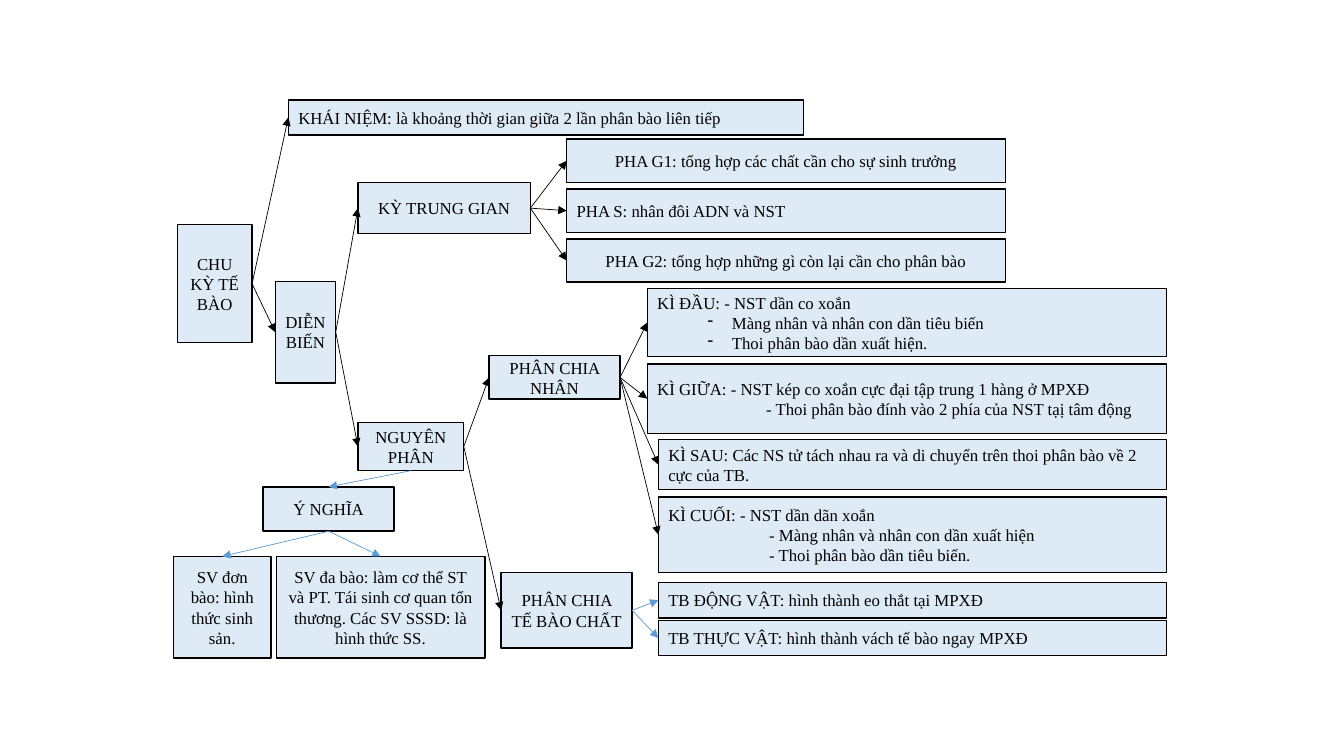
from lxml import etree
from pptx import Presentation
from pptx.dml.color import RGBColor
from pptx.enum.shapes import MSO_CONNECTOR, MSO_SHAPE
from pptx.enum.text import MSO_ANCHOR, PP_ALIGN
from pptx.oxml.ns import qn
from pptx.util import Inches, Pt

RECTANGLE = MSO_SHAPE.RECTANGLE
STRAIGHT = MSO_CONNECTOR.STRAIGHT
MIDDLE = MSO_ANCHOR.MIDDLE
CENTER, LEFT = PP_ALIGN.CENTER, PP_ALIGN.LEFT
TOP_SIDE, LEFT_SIDE, BOTTOM_SIDE, RIGHT_SIDE = range(4)
COLOURS = {"fill": "DEEBF7", "ink": "000000", "blue": "5B9BD5"}
FONT = "Times New Roman"
BULLET_INDENT, BULLET_HANGING = 0.74, 0.24


def colour(name):
    """Return the named colour of the palette."""
    return RGBColor.from_string(COLOURS[name])


def indent_paragraph(paragraph, indent, bullet):
    """Indent a paragraph, with a hanging dash if it is a bullet."""
    properties = paragraph._p.get_or_add_pPr()
    properties.set("marL", str(Inches(indent)))
    if bullet:
        properties.set("indent", str(-Inches(BULLET_HANGING)))
        etree.SubElement(properties, qn("a:buChar")).set("char", "-")


def add_node(slide, box, lines, align=CENTER, indent=0, bullet=False):
    """Add a framed box of text; lines after the first are indented."""
    shape = slide.shapes.add_shape(RECTANGLE, *[Inches(length) for length in box])
    shape.shadow.inherit = False
    shape.fill.solid()
    shape.fill.fore_color.rgb = colour("fill")
    shape.line.color.rgb = colour("ink")
    shape.line.width = Pt(1)
    frame = shape.text_frame
    frame.word_wrap = True
    frame.vertical_anchor = MIDDLE
    for index, line in enumerate(lines):
        paragraph = frame.add_paragraph() if index else frame.paragraphs[0]
        paragraph.alignment = align
        if index:
            indent_paragraph(paragraph, indent, bullet)
        run = paragraph.add_run()
        run.text = line
        run.font.name = FONT
        run.font.size = Pt(12)
        run.font.color.rgb = colour("ink")
    return shape


def add_arrows(slide, parent, children, ink="ink", start=RIGHT_SIDE, end=LEFT_SIDE):
    """Join a parent box to each of its children with an arrow."""
    for child in children:
        arrow = slide.shapes.add_connector(STRAIGHT, 0, 0, 0, 0)
        arrow.begin_connect(parent, start)
        arrow.end_connect(child, end)
        arrow.line.color.rgb = colour(ink)
        arrow.line.width = Pt(0.5)
        etree.SubElement(arrow.line._get_or_add_ln(), qn("a:tailEnd")).set("type", "triangle")
        etree.SubElement(arrow._element.spPr, qn("a:effectLst"))


def add_cycle(slide, left, top):
    """Add the root with its definition and return the course box."""
    root = add_node(slide, (left, top + 1.24, 0.74, 1.17), ["CHU KỲ TẾ BÀO"])
    concept = add_node(slide, (left + 1.1, top, 5.11, 0.35),
                       ["KHÁI NIỆM: là khoảng thời gian giữa 2 lần phân bào liên tiếp"], LEFT)
    course = add_node(slide, (left + 0.97, top + 1.8, 0.6, 1.01), ["DIỄN BIẾN"])
    add_arrows(slide, root, [concept, course])
    return course


def add_interphase(slide, left, top):
    """Add the interphase box with its three phases and return it."""
    interphase = add_node(slide, (left, top + 0.43, 1.71, 0.51), ["KỲ TRUNG GIAN"])
    texts = [
        ("PHA G1: tổng hợp các chất cần cho sự sinh trưởng", CENTER),
        ("PHA S: nhân đôi ADN và NST", LEFT),
        ("PHA G2: tổng hợp những gì còn lại cần cho phân bào", CENTER),
    ]
    phases = [add_node(slide, (left + 2.07, top + 0.495 * row, 4.35, 0.43), [text], align)
              for row, (text, align) in enumerate(texts)]
    add_arrows(slide, interphase, phases)
    return interphase


def add_nuclear_division(slide, left, top):
    """Add the nuclear division box with its four stages and return it."""
    nuclear = add_node(slide, (left, top + 0.67, 1.3, 0.43), ["PHÂN CHIA NHÂN"])
    right = left + 6.72
    stages = [
        (5.15, 0, 0.68, BULLET_INDENT, True,
         ["KÌ ĐẦU: - NST dần co xoắn",
          "Màng nhân và nhân con dần tiêu biến",
          "Thoi phân bào dần xuất hiện."]),
        (5.15, 0.75, 0.69, 1.08, False,
         ["KÌ GIỮA: - NST kép co xoắn cực đại tập trung 1 hàng ở MPXĐ",
          "- Thoi phân bào đính vào 2 phía của NST tạị tâm động"]),
        (5.04, 1.5, 0.5, 0, False,
         ["KÌ SAU: Các NS tử tách nhau ra và di chuyển trên thoi phân bào về 2 cực của TB."]),
        (5.04, 2.07, 0.75, 1, False,
         ["KÌ CUỐI: - NST dần dãn xoắn",
          "- Màng nhân và nhân con dần xuất hiện",
          "- Thoi phân bào dần tiêu biến."]),
    ]
    nodes = [add_node(slide, (right - width, top + offset, width, height), lines,
                      LEFT, indent, bullet)
             for width, offset, height, indent, bullet, lines in stages]
    add_arrows(slide, nuclear, nodes)
    return nuclear


def add_cytoplasm_division(slide, left, top):
    """Add the cytoplasm division box with its two cell types and return it."""
    cytoplasm = add_node(slide, (left, top, 1.3, 0.75), ["PHÂN CHIA TẾ BÀO CHẤT"])
    texts = ["TB ĐỘNG VẬT: hình thành eo thắt tại MPXĐ",
             "TB THỰC VẬT: hình thành vách tế bào ngay MPXĐ"]
    cells = [add_node(slide, (left + 1.56, top + 0.1 + 0.375 * row, 5.04, 0.35), [text], LEFT)
             for row, text in enumerate(texts)]
    add_arrows(slide, cytoplasm, cells, "blue")
    return cytoplasm


def add_significance(slide, left, top):
    """Add the significance box with its two organism types and return it."""
    significance = add_node(slide, (left + 0.89, top, 1.3, 0.44), ["Ý NGHĨA"])
    organisms = [
        (0, 0.97, "SV đơn bào: hình thức sinh sản."),
        (1.02, 2.07, "SV đa bào: làm cơ thể ST và PT. Tái sinh cơ quan tổn thương. "
                     "Các SV SSSD: là hình thức SS."),
    ]
    nodes = [add_node(slide, (left + offset, top + 0.69, width, 1.01), [text])
             for offset, width, text in organisms]
    add_arrows(slide, significance, nodes, "blue", BOTTOM_SIDE, TOP_SIDE)
    return significance


def main():
    """Build the cell cycle diagram and save it."""
    presentation = Presentation()
    presentation.slide_width = Inches(13.33)
    presentation.slide_height = Inches(7.5)
    slide = presentation.slides.add_slide(presentation.slide_layouts[6])
    course = add_cycle(slide, 1.76, 0.99)
    interphase = add_interphase(slide, 3.55, 1.38)
    mitosis = add_node(slide, (3.55, 4.19, 1.05, 0.48), ["NGUYÊN PHÂN"])
    nuclear = add_nuclear_division(slide, 4.85, 2.86)
    cytoplasm = add_cytoplasm_division(slide, 4.97, 5.68)
    significance = add_significance(slide, 1.72, 4.83)
    add_arrows(slide, course, [interphase, mitosis])
    add_arrows(slide, mitosis, [nuclear, cytoplasm])
    add_arrows(slide, mitosis, [significance], "blue", BOTTOM_SIDE, TOP_SIDE)
    presentation.save("out.pptx")


if __name__ == "__main__":
    main()
